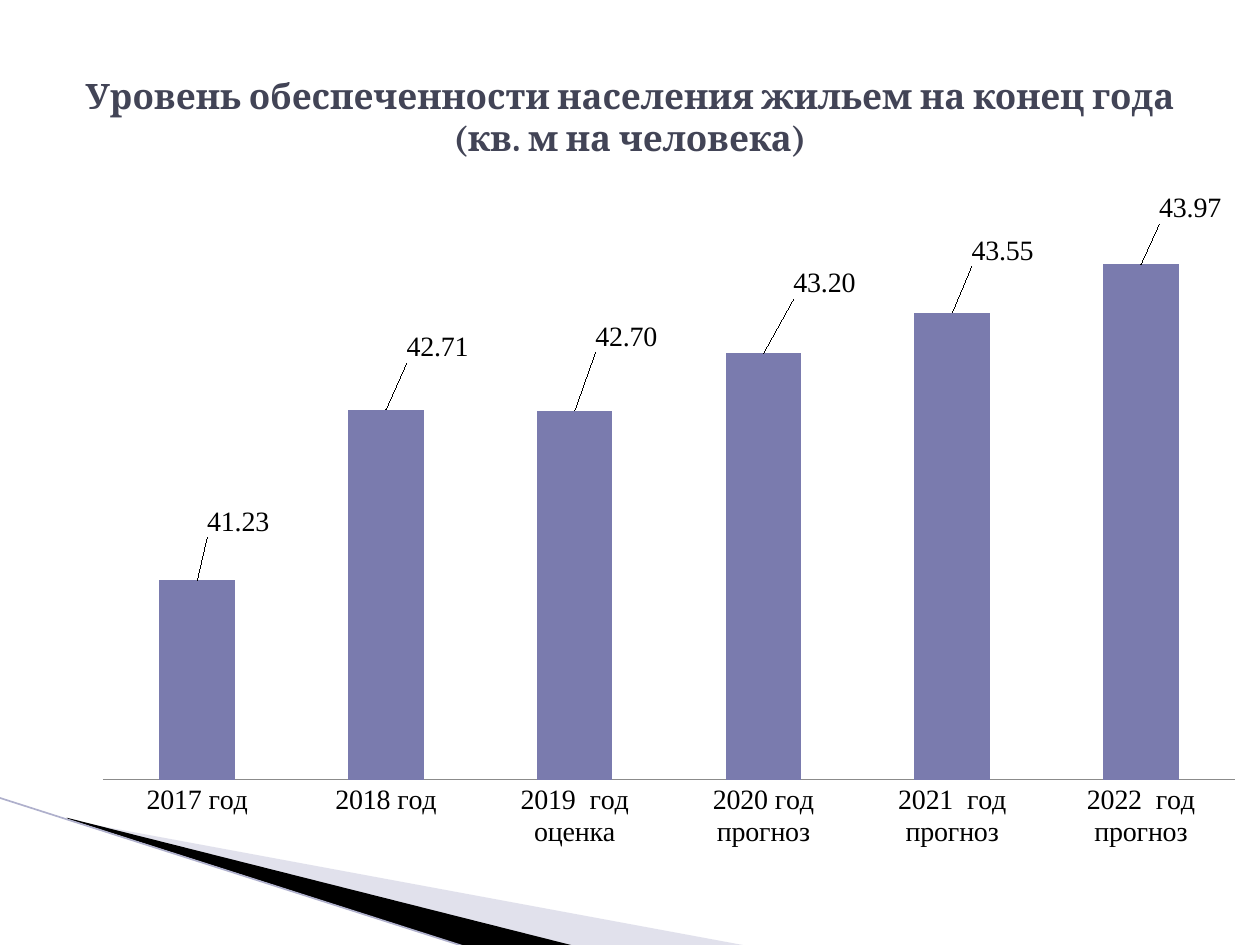
import pptx
import pptx.chart.data
import pptx.dml.color
import pptx.enum.chart
import pptx.enum.shapes
import pptx.enum.text
import pptx.oxml.ns
import pptx.oxml.xmlchemy
import pptx.util
from pptx.util import Inches

RGBColor = pptx.dml.color.RGBColor
TITLE_COLOR = RGBColor(0x42, 0x44, 0x56)
BAR_COLOR = RGBColor(0x7A, 0x7B, 0xAE)
WEDGE_COLOR = RGBColor(0xB6, 0xB6, 0xD1)
EDGE_COLOR = RGBColor(0xAF, 0xB0, 0xCC)
AXIS_COLOR = RGBColor(0x8B, 0x8B, 0x8B)
BLACK = RGBColor(0, 0, 0)
NUMBER_FORMAT = "#,##0.00"
qn = pptx.oxml.ns.qn


def new_element(tag, value=None):
    """Return an XML element, with a val attribute if one is given."""
    element = pptx.oxml.xmlchemy.OxmlElement(tag)
    if value is not None:
        element.set("val", str(value))
    return element


def manual_layout(**settings):
    """Return a c:layout element holding the settings in order."""
    layout = new_element("c:layout")
    manual = new_element("c:manualLayout")
    layout.append(manual)
    for name, value in settings.items():
        manual.append(new_element("c:" + name, value))
    return layout


presentation = pptx.Presentation()
presentation.slide_width = Inches(10)
presentation.slide_height = Inches(7.5)
slide = presentation.slides.add_slide(presentation.slide_layouts[5])

# Corner wedges
wedges = [
    (WEDGE_COLOR, 40, [(0.55, 6.51), (5.95, 7.51), (4.56, 7.51), (0.55, 6.5)]),
    (BLACK, 100, [(0.53, 6.49), (4.57, 7.51), (3.72, 7.52), (0.54, 6.5)]),
]
for color, opacity, points in wedges:
    corners = [(Inches(x), Inches(y)) for x, y in points]
    builder = slide.shapes.build_freeform(*corners[0])
    builder.add_line_segments(corners[1:], close=True)
    wedge = builder.convert_to_shape()
    wedge.shadow.inherit = False
    wedge.fill.solid()
    wedge.fill.fore_color.rgb = color
    wedge.line.fill.background()
    if opacity < 100:
        solid_fill = wedge._element.spPr.find(qn("a:solidFill"))
        solid_fill[0].append(new_element("a:alpha", opacity * 1000))

# Corner edge line
edge = slide.shapes.add_connector(
    pptx.enum.shapes.MSO_CONNECTOR.STRAIGHT,
    Inches(-0.01), Inches(6.33), Inches(3.71), Inches(7.52),
)
edge.line.color.rgb = EDGE_COLOR
edge.line.width = pptx.util.Pt(0.95)
edge._element.spPr.append(new_element("a:effectLst"))

# Housing chart
chart_data = pptx.chart.data.CategoryChartData(number_format=NUMBER_FORMAT)
chart_data.categories = [
    "2017 год", "2018 год", "2019  год оценка",
    "2020 год прогноз", "2021  год прогноз", "2022  год прогноз",
]
chart_data.add_series("Series 1", [41.23, 42.71, 42.7, 43.2, 43.55, 43.97])
chart = slide.shapes.add_chart(
    pptx.enum.chart.XL_CHART_TYPE.COLUMN_CLUSTERED,
    Inches(0.51), Inches(1.39), Inches(9.3), Inches(5.46), chart_data,
).chart
chart.has_legend = False
chart.has_title = False
chart.font.name = "DejaVu Sans Mono"
chart.font.size = pptx.util.Pt(18)
chart.font.color.rgb = BLACK

plot_area = chart._chartSpace.chart.plotArea
for old_layout in plot_area.findall(qn("c:layout")):
    plot_area.remove(old_layout)
plot_area.insert(0, manual_layout(
    layoutTarget="inner", xMode="edge", yMode="edge",
    x=0.033, y=0.041, w=0.967, h=0.838,
))

# Axes
value_axis = chart.value_axis
value_axis.minimum_scale = 39.5
value_axis.maximum_scale = 44.5
value_axis.has_major_gridlines = False
value_axis.tick_labels.number_format = NUMBER_FORMAT
value_axis.tick_labels.number_format_is_linked = False
value_axis.visible = False
category_axis = chart.category_axis
category_axis.major_tick_mark = pptx.enum.chart.XL_TICK_MARK.NONE
category_axis.format.line.color.rgb = AXIS_COLOR

# Bars and labels
plot = chart.plots[0]
plot.gap_width = 150
plot.vary_by_categories = False
series = plot.series[0]
series.format.fill.solid()
series.format.fill.fore_color.rgb = BAR_COLOR
labels = series.data_labels
labels.show_value = True
labels.number_format = NUMBER_FORMAT
labels.number_format_is_linked = False
label_fonts = [category_axis.tick_labels.font, labels.font]

label_offsets = [
    (0.035, -0.055), (0.044, -0.06), (0.044, -0.077),
    (0.052, -0.071), (0.043, -0.06), (0.042, -0.051),
]
for index, (x, y) in enumerate(label_offsets):
    label = series.points[index].data_label
    label.position = pptx.enum.chart.XL_LABEL_POSITION.OUTSIDE_END
    label_fonts.append(label.font)
    label._dLbl.insert(1, manual_layout(x=x, y=y))

for font in label_fonts:
    font.name = "Times New Roman"
    font.size = pptx.util.Pt(16)
    font.color.rgb = BLACK

# Title
title = slide.shapes.title
title.left, title.top = Inches(0.5), Inches(0.3)
title.width, title.height = Inches(9), Inches(1.25)
title.text_frame.vertical_anchor = pptx.enum.text.MSO_ANCHOR.MIDDLE
title.text_frame.text = "Уровень обеспеченности населения жильем на конец года\v(кв. м на человека)"
paragraph = title.text_frame.paragraphs[0]
paragraph.alignment = pptx.enum.text.PP_ALIGN.CENTER
paragraph.font.name = "Cambria"
paragraph.font.size = pptx.util.Pt(20)
paragraph.font.bold = True
paragraph.font.color.rgb = TITLE_COLOR

presentation.save("out.pptx")
